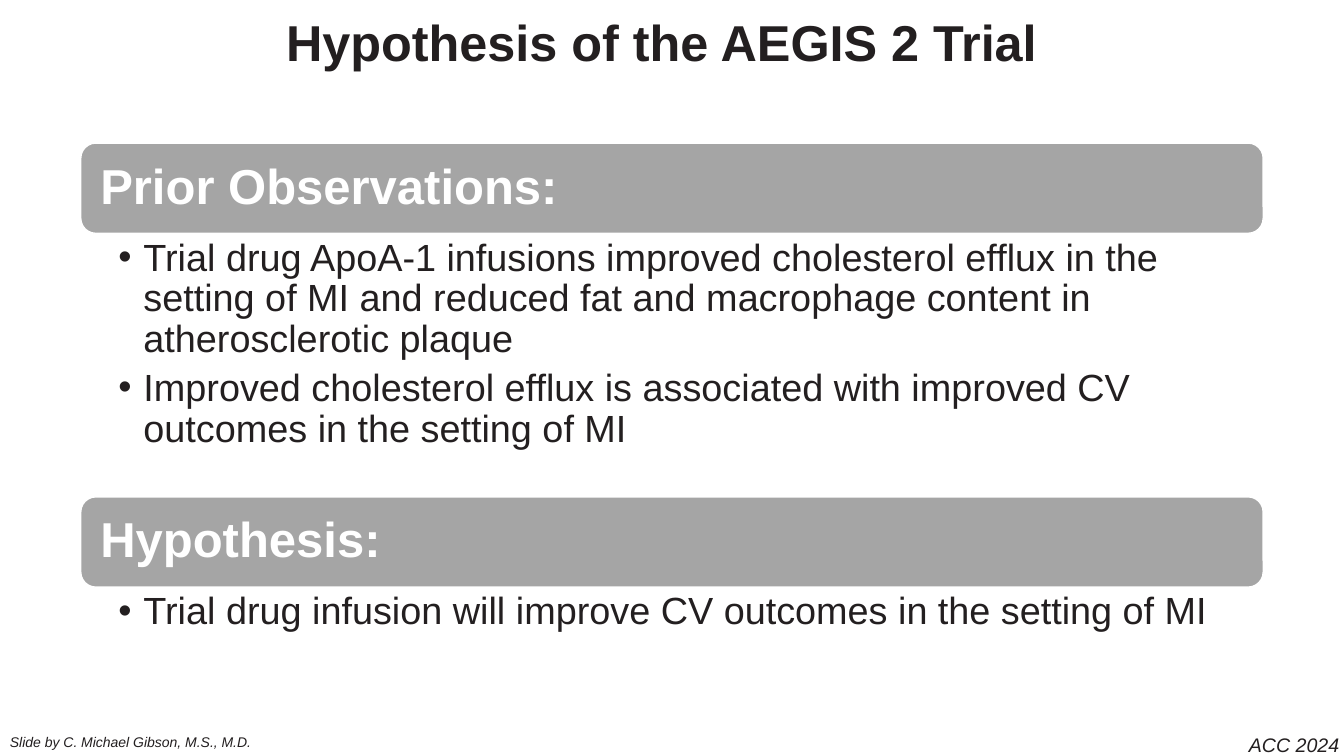
"""Build the trial hypothesis slide with two headed bullet sections."""
from dataclasses import dataclass

from lxml.etree import SubElement
from pptx import Presentation
from pptx.dml.color import RGBColor
from pptx.enum.shapes import MSO_SHAPE
from pptx.enum.text import MSO_ANCHOR, PP_ALIGN
from pptx.oxml.ns import qn
from pptx.slide import Slide
from pptx.text.text import TextFrame, _Paragraph
from pptx.util import Pt

INK = RGBColor(0x23, 0x1F, 0x20)
GRAY = RGBColor(0xA5, 0xA5, 0xA5)
WHITE = RGBColor(0xFF, 0xFF, 0xFF)
LEFT, WIDTH = 57.7, 844.6
BAR = 64.5


@dataclass
class Part:
    head: str
    top: float
    depth: float
    points: list[str]


@dataclass
class Note:
    text: str
    left: float
    top: float
    width: float
    height: float
    size: float


PARTS = [
    Part("Prior Observations:", 102.2, 188, [
        "Trial drug ApoA-1 infusions improved cholesterol efflux in the setting of MI "
        "and reduced fat and macrophage content in atherosclerotic plaque",
        "Improved cholesterol efflux is associated with improved CV outcomes "
        "in the setting of MI",
    ]),
    Part("Hypothesis:", 354.9, 45.4, [
        "Trial drug infusion will improve CV outcomes in the setting of MI",
    ]),
]
NOTES = [
    Note("Slide by C. Michael Gibson, M.S., M.D.", 0, 520.6, 188.6, 19.4, 10),
    Note("ACC 2024", 884.9, 519.8, 79.9, 24.2, 14),
]


def pad(frame: TextFrame, left: float, top: float, right: float, base: float) -> None:
    """Set the four insets of a text frame."""
    frame.margin_left, frame.margin_top = Pt(left), Pt(top)
    frame.margin_right, frame.margin_bottom = Pt(right), Pt(base)


def style(para: _Paragraph, size: float, color: RGBColor,
          bold: bool = False, italic: bool = False) -> None:
    """Format every run of a paragraph."""
    for run in para.runs:
        font = run.font
        font.name, font.size = "Arial", Pt(size)
        font.bold, font.italic = bold, italic
        font.color.rgb = color


def add_mark(para: _Paragraph) -> None:
    """Give a paragraph a hanging bullet."""
    para.level = 1
    props = para._p.get_or_add_pPr()
    props.set("marL", str(Pt(18)))
    props.set("indent", str(Pt(-18)))
    tint = SubElement(props, qn("a:buClr"))
    SubElement(tint, qn("a:srgbClr"), val=str(INK))
    SubElement(props, qn("a:buFont"), typeface="Arial")
    SubElement(props, qn("a:buChar"), char="•")


def add_title(slide: Slide, text: str) -> None:
    """Add the centred slide title."""
    box = slide.shapes.add_textbox(Pt(50.4), Pt(13), Pt(WIDTH), Pt(30.2))
    frame = box.text_frame
    frame.word_wrap = True
    pad(frame, 0, 0, 0, 0)
    frame.text = text
    para = frame.paragraphs[0]
    para.alignment = PP_ALIGN.CENTER
    para.line_spacing = 0.9
    style(para, 36, INK, bold=True)


def add_note(slide: Slide, note: Note) -> None:
    """Add an italic footer note."""
    box = slide.shapes.add_textbox(
        Pt(note.left), Pt(note.top), Pt(note.width), Pt(note.height))
    frame = box.text_frame
    frame.word_wrap = False
    frame.text = note.text
    style(frame.paragraphs[0], note.size, INK, italic=True)


def add_part(slide: Slide, part: Part) -> None:
    """Add a heading bar with its bullet points below."""
    bar = slide.shapes.add_shape(
        MSO_SHAPE.ROUNDED_RECTANGLE, Pt(LEFT), Pt(part.top), Pt(WIDTH), Pt(BAR))
    bar.shadow.inherit = False
    bar.fill.solid()
    bar.fill.fore_color.rgb = GRAY
    bar.line.color.rgb = WHITE
    bar.line.width = Pt(1)
    frame = bar.text_frame
    frame.vertical_anchor = MSO_ANCHOR.MIDDLE
    pad(frame, 10.8, 10.8, 10.8, 10.8)
    frame.text = part.head
    head = frame.paragraphs[0]
    head.alignment = PP_ALIGN.LEFT
    head.line_spacing = 0.9
    style(head, 35, WHITE, bold=True)

    box = slide.shapes.add_textbox(
        Pt(LEFT), Pt(part.top + BAR), Pt(WIDTH), Pt(part.depth))
    frame = box.text_frame
    frame.word_wrap = True
    pad(frame, 26.8, 3.6, 19.4, 3.6)
    frame.text = "\n".join(part.points)
    for rank, para in enumerate(frame.paragraphs):
        add_mark(para)
        para.line_spacing = 0.9
        if rank:
            para.space_before = Pt(5.4)
        style(para, 27, INK)


def main() -> None:
    """Build and save the slide."""
    deck = Presentation()
    deck.slide_width, deck.slide_height = Pt(960), Pt(540)
    slide = deck.slides.add_slide(deck.slide_layouts[6])
    for note in NOTES:
        add_note(slide, note)
    add_title(slide, "Hypothesis of the AEGIS 2 Trial")
    for part in PARTS:
        add_part(slide, part)
    deck.save("out.pptx")


if __name__ == "__main__":
    main()
